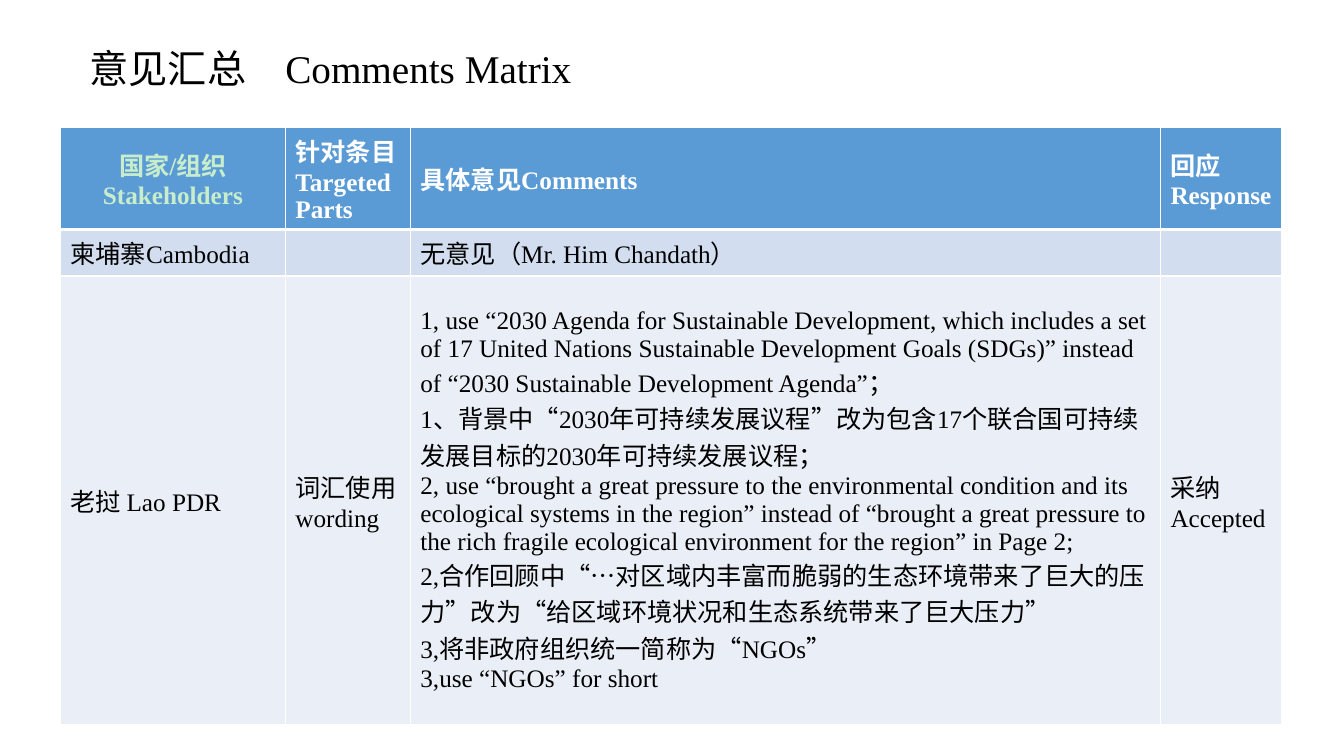
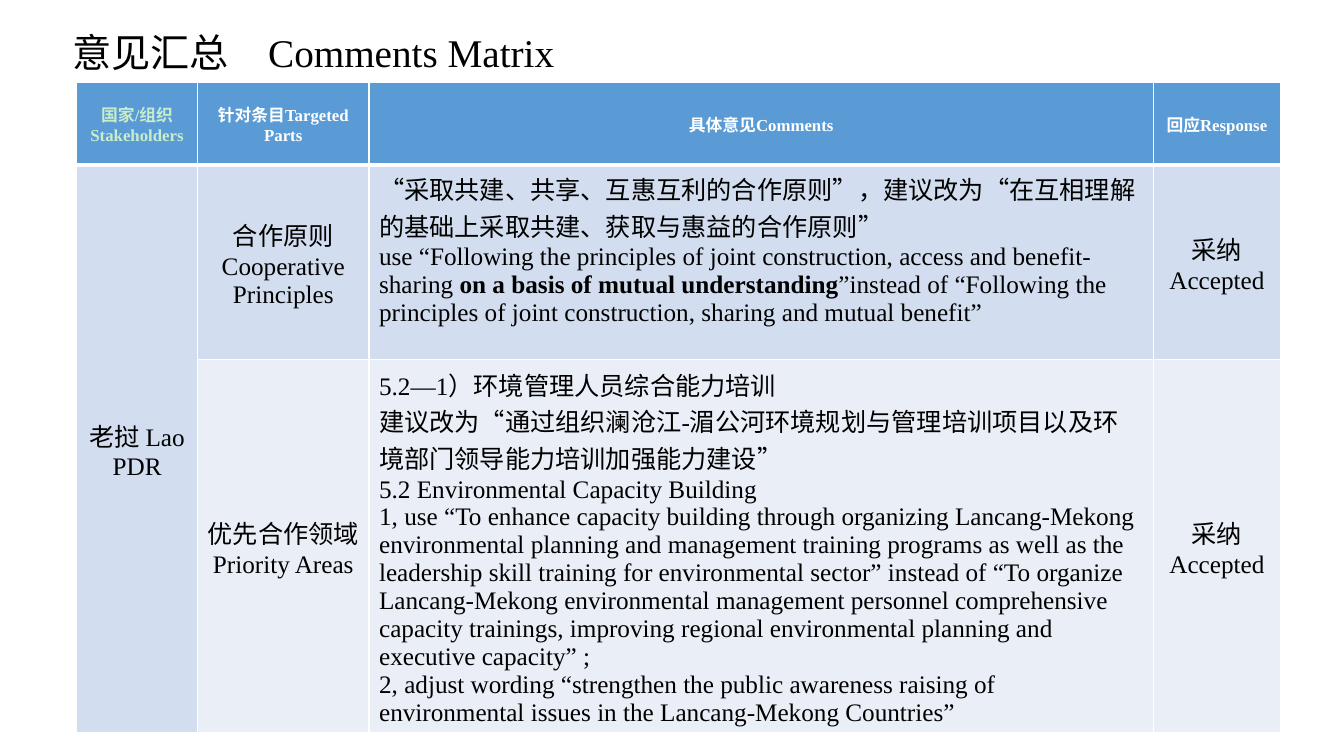
"""Build the two comments matrix slides."""
from dataclasses import dataclass

from lxml import etree
from pptx import Presentation
from pptx.dml.color import RGBColor
from pptx.enum.text import MSO_ANCHOR, PP_ALIGN
from pptx.oxml.ns import qn
from pptx.util import Inches, Pt

MIDDLE = MSO_ANCHOR.MIDDLE
LEFT, CENTER = PP_ALIGN.LEFT, PP_ALIGN.CENTER

FONT = "Times New Roman"
BLACK, WHITE, PALE_GREEN = "000000", "FFFFFF", "C7EDCC"
HEADER_FILL = "5B9BD5"
BAND_FILLS = ("D2DEEF", "EAEFF7")
BODY_SIZE = 18
THIN_BORDER, THICK_BORDER = 1, 3
BOLD_MARK = "**"

TITLE = "意见汇总　Comments Matrix"
HEADERS = (
    "国家/组织Stakeholders",
    "针对条目Targeted Parts",
    "具体意见Comments",
    "回应Response",
)
ACCEPTED = ("采纳", "Accepted")


@dataclass(frozen=True)
class TextStyle:
    size: float
    color: str
    bold: bool = False
    alignment: PP_ALIGN = LEFT


@dataclass(frozen=True)
class Entry:
    paragraphs: tuple[str, ...] = ()
    row_span: int = 1
    bottom_margin: float = 0.05


@dataclass(frozen=True)
class Matrix:
    title_box: tuple[float, float, float, float]
    left: float
    top: float
    column_widths: tuple[float, ...]
    row_heights: tuple[float, ...]
    header_size: float
    centered_headers: tuple[int, ...]
    centered_columns: tuple[int, ...]
    rows: tuple[tuple[Entry, ...], ...]


MATRICES = (
    Matrix(
        title_box=(0.79, 0.28, 11.5, 0.85),
        left=0.6,
        top=1.26,
        column_widths=(2.23, 1.24, 7.44, 1.2),
        row_heights=(1.0, 0.46, 4.45),
        header_size=18,
        centered_headers=(0,),
        centered_columns=(),
        rows=(
            (
                Entry(("柬埔寨Cambodia",)),
                Entry(),
                Entry(("无意见（Mr. Him Chandath）",)),
                Entry(),
            ),
            (
                Entry(("老挝 Lao PDR",)),
                Entry(("词汇使用 wording",)),
                Entry((
                    "1, use “2030 Agenda for Sustainable Development, which includes "
                    "a set of 17 United Nations Sustainable Development Goals (SDGs)” "
                    "instead of “2030 Sustainable Development Agenda”；",
                    "1、背景中“2030年可持续发展议程”改为包含17个联合国可持续发展目标的"
                    "2030年可持续发展议程；",
                    "2, use “brought a great pressure to the environmental condition "
                    "and its ecological systems in the region” instead of “brought a "
                    "great pressure to the rich fragile ecological environment for "
                    "the region” in Page 2;",
                    "2,合作回顾中“…对区域内丰富而脆弱的生态环境带来了巨大的压力”"
                    "改为“给区域环境状况和生态系统带来了巨大压力”",
                    "3,将非政府组织统一简称为“NGOs”",
                    "3,use “NGOs” for short",
                )),
                Entry(ACCEPTED),
            ),
        ),
    ),
    Matrix(
        title_box=(0.62, 0, 11.5, 1.09),
        left=0.76,
        top=0.82,
        column_widths=(1.2, 1.7, 7.78, 1.26),
        row_heights=(0.82, 1.93, 3.67),
        header_size=12,
        centered_headers=(0, 1, 2, 3),
        centered_columns=(0, 1, 3),
        rows=(
            (
                Entry(("老挝 Lao PDR",), row_span=2),
                Entry(("合作原则", "Cooperative Principles")),
                Entry(
                    (
                        "“采取共建、共享、互惠互利的合作原则”，建议改为“在互相理解的"
                        "基础上采取共建、获取与惠益的合作原则”",
                        "use “Following the principles of joint construction, access "
                        "and benefit-sharing **on a basis of mutual understanding**”"
                        "instead of “Following the principles of joint construction, "
                        "sharing and mutual benefit”",
                    ),
                    bottom_margin=0.33,
                ),
                Entry(ACCEPTED),
            ),
            (
                Entry(),
                Entry(("优先合作领域", "Priority Areas")),
                Entry((
                    "5.2—1）环境管理人员综合能力培训",
                    "建议改为“通过组织澜沧江-湄公河环境规划与管理培训项目以及环境部门"
                    "领导能力培训加强能力建设”",
                    "5.2 Environmental Capacity Building",
                    "1, use “To enhance capacity building through organizing "
                    "Lancang-Mekong environmental planning and management training "
                    "programs as well as the leadership skill training for "
                    "environmental sector” instead of “To organize Lancang-Mekong "
                    "environmental management personnel comprehensive capacity "
                    "trainings, improving regional environmental planning and "
                    "executive capacity” ;",
                    "2, adjust wording “strengthen the public awareness raising of "
                    "environmental issues in the Lancang-Mekong Countries”",
                )),
                Entry(ACCEPTED),
            ),
        ),
    ),
)


def rgb(color: str) -> RGBColor:
    return RGBColor.from_string(color)


def write_text(text_frame, paragraphs: tuple[str, ...], style: TextStyle) -> None:
    text_frame.text = "\n".join(paragraphs)
    for paragraph in text_frame.paragraphs:
        paragraph.alignment = style.alignment
        first, *others = paragraph.text.split(BOLD_MARK)
        paragraph.text = first
        for piece in others:
            paragraph.add_run().text = piece
        for index, run in enumerate(paragraph.runs):
            run.font.name = FONT
            run.font.size = Pt(style.size)
            run.font.bold = style.bold or index % 2 == 1
            run.font.color.rgb = rgb(style.color)


def add_title(slide, box: tuple[float, float, float, float]) -> None:
    shape = slide.shapes.add_textbox(*map(Inches, box))
    text_frame = shape.text_frame
    text_frame.word_wrap = True
    text_frame.vertical_anchor = MIDDLE
    write_text(text_frame, (TITLE,), TextStyle(28, BLACK))
    text_frame.paragraphs[0].line_spacing = 0.9


def set_borders(cell, row_index: int) -> None:
    widths = {
        "a:lnL": THIN_BORDER,
        "a:lnR": THIN_BORDER,
        "a:lnT": THICK_BORDER if row_index == 1 else THIN_BORDER,
        "a:lnB": THICK_BORDER if row_index == 0 else THIN_BORDER,
    }
    properties = cell._tc.get_or_add_tcPr()
    for tag, width in widths.items():
        line = etree.SubElement(properties, qn(tag), w=str(Pt(width)))
        fill = etree.SubElement(line, qn("a:solidFill"))
        etree.SubElement(fill, qn("a:srgbClr"), val=WHITE)


def fill_cell(cell, entry: Entry, style: TextStyle, row_index: int, fill: str) -> None:
    set_borders(cell, row_index)
    cell.fill.solid()
    cell.fill.fore_color.rgb = rgb(fill)
    cell.vertical_anchor = MIDDLE
    cell.margin_bottom = Inches(entry.bottom_margin)
    if entry.paragraphs:
        write_text(cell.text_frame, entry.paragraphs, style)


def cell_style(matrix: Matrix, row_index: int, column_index: int) -> TextStyle:
    if row_index == 0:
        color = PALE_GREEN if column_index == 0 else WHITE
        alignment = CENTER if column_index in matrix.centered_headers else LEFT
        return TextStyle(matrix.header_size, color, True, alignment)
    alignment = CENTER if column_index in matrix.centered_columns else LEFT
    return TextStyle(BODY_SIZE, BLACK, False, alignment)


def add_matrix(slide, matrix: Matrix) -> None:
    frame = slide.shapes.add_table(
        len(matrix.row_heights),
        len(matrix.column_widths),
        Inches(matrix.left),
        Inches(matrix.top),
        Inches(sum(matrix.column_widths)),
        Inches(sum(matrix.row_heights)),
    )
    table = frame.table
    for column, width in zip(table.columns, matrix.column_widths):
        column.width = Inches(width)
    for row, height in zip(table.rows, matrix.row_heights):
        row.height = Inches(height)

    header_row = tuple(Entry((header,)) for header in HEADERS)
    for row_index, entries in enumerate((header_row, *matrix.rows)):
        fill = BAND_FILLS[row_index - 1] if row_index else HEADER_FILL
        for column_index, entry in enumerate(entries):
            cell = table.cell(row_index, column_index)
            style = cell_style(matrix, row_index, column_index)
            fill_cell(cell, entry, style, row_index, fill)
            if entry.row_span > 1:
                last_row = row_index + entry.row_span - 1
                cell.merge(table.cell(last_row, column_index))


def main() -> None:
    presentation = Presentation()
    presentation.slide_width = Inches(13.33)
    presentation.slide_height = Inches(7.5)
    blank_layout = presentation.slide_layouts[6]
    for matrix in MATRICES:
        slide = presentation.slides.add_slide(blank_layout)
        add_matrix(slide, matrix)
        add_title(slide, matrix.title_box)
    presentation.save("out.pptx")


if __name__ == "__main__":
    main()
